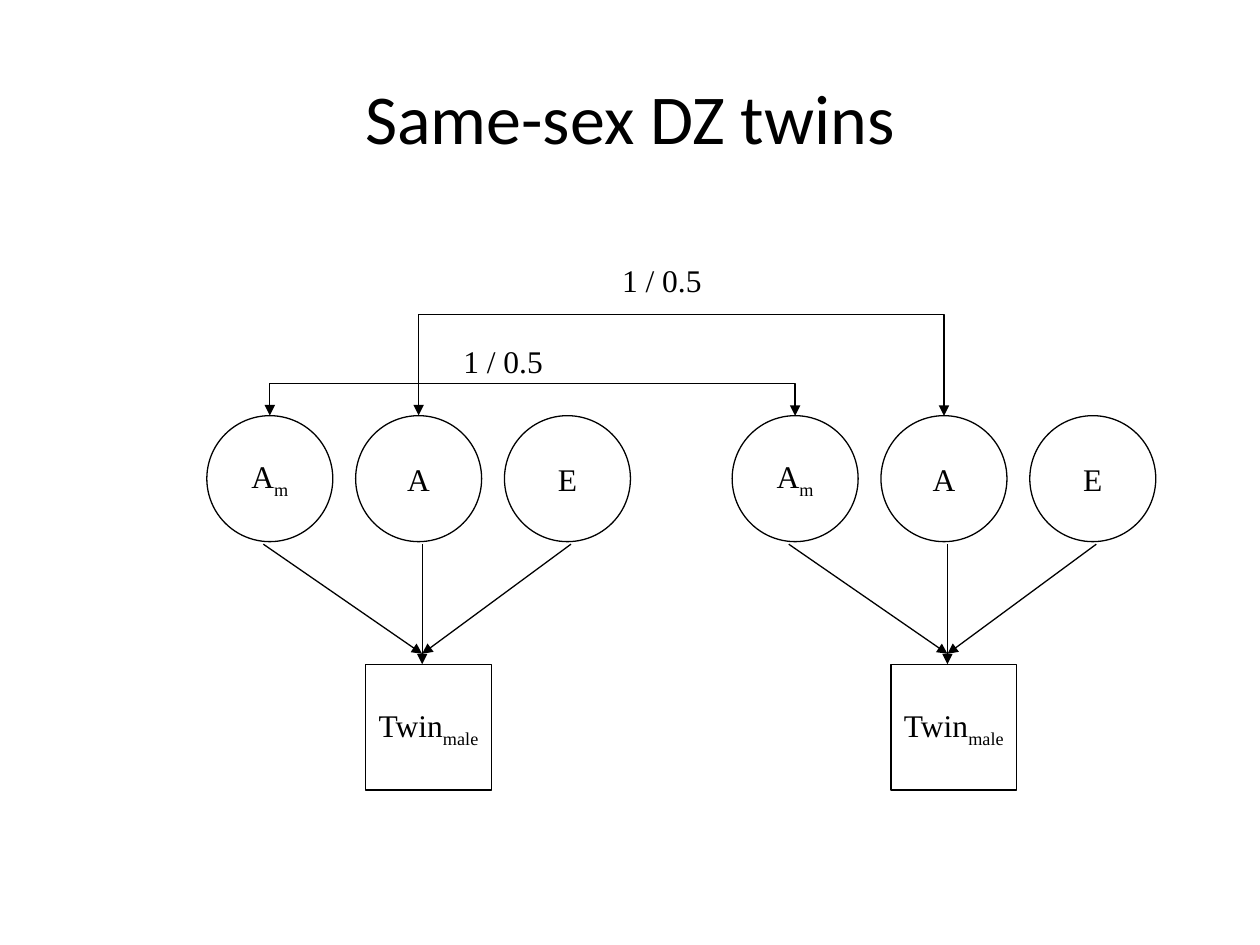
from lxml.etree import SubElement
from pptx import Presentation
from pptx.dml.color import RGBColor
from pptx.enum.shapes import MSO_CONNECTOR as Link, MSO_SHAPE as Preset
from pptx.enum.text import MSO_ANCHOR as Anchor, PP_ALIGN as Align
from pptx.oxml.ns import qn
from pptx.util import Cm, Pt

BLACK = RGBColor(0, 0, 0)
WHITE = RGBColor(255, 255, 255)

NODE = 2.54          # diameter of a circle, side of a square
PITCH = 3.0          # from one circle to the next
TWINS = (4.17, 14.76)  # left edge of each twin's half
CIRCLE_TOP = 8.38
ARROW_TOP = 10.97
SQUARE_TOP = 13.39
THIN = 0.01          # box depth of a bracket whose ends are level


class PathDiagram:
    title_font = "Calibri"
    body_font = "Times New Roman"
    body_size = 18
    line_width = 0.75

    def __init__(self, slide):
        self.shapes = slide.shapes

    def set_text(self, frame, words, size, font, align, subscript=""):
        paragraph = frame.paragraphs[0]
        paragraph.alignment = align
        paragraph.font.size = Pt(size)
        paragraph.font.name = font
        paragraph.font.color.rgb = BLACK
        paragraph.add_run().text = words
        if subscript:
            lowered = paragraph.add_run()
            lowered.text = subscript
            lowered._r.get_or_add_rPr().set("baseline", "-25000")

    def title(self, words, left, top, width, height):
        box = self.shapes.add_textbox(Cm(left), Cm(top), Cm(width), Cm(height))
        box.text_frame.word_wrap = True
        box.text_frame.vertical_anchor = Anchor.MIDDLE
        self.set_text(box.text_frame, words, 40, self.title_font, Align.CENTER)

    def label(self, words, left, top):
        box = self.shapes.add_textbox(Cm(left), Cm(top), Cm(3), Cm(1.02))
        box.text_frame.word_wrap = True
        self.set_text(box.text_frame, words, self.body_size, self.body_font,
                      Align.LEFT)

    def node(self, preset, left, top, words, subscript=""):
        node = self.shapes.add_shape(preset, Cm(left), Cm(top), Cm(NODE), Cm(NODE))
        node.shadow.inherit = False
        node.fill.solid()
        node.fill.fore_color.rgb = WHITE
        node.line.color.rgb = BLACK
        node.line.width = Pt(self.line_width)
        node.text_frame.word_wrap = False
        node.text_frame.vertical_anchor = Anchor.MIDDLE
        self.set_text(node.text_frame, words, self.body_size, self.body_font,
                      Align.CENTER, subscript)

    def connect(self, kind, start, end, arrow_ends):
        """Draw a connector and return its shape properties element."""
        points = [Cm(value) for value in (*start, *end)]
        connector = self.shapes.add_connector(kind, *points)
        connector.line.color.rgb = BLACK
        connector.line.width = Pt(self.line_width)
        properties = connector.element.spPr
        for arrow_end in arrow_ends:
            SubElement(properties.find(qn("a:ln")), qn(arrow_end), type="triangle")
        SubElement(properties, qn("a:effectLst"))
        return properties

    def arrow(self, start, end):
        self.connect(Link.STRAIGHT, start, end, ["a:tailEnd"])

    def bracket(self, left, right, foot, rise):
        """Double-headed elbow over two points at one level, turned a quarter."""
        middle, half = (left + right) / 2, (right - left) / 2
        properties = self.connect(
            Link.ELBOW, (middle - THIN / 2, foot + half),
            (middle + THIN / 2, foot - half), ["a:headEnd", "a:tailEnd"])
        properties.find(qn("a:xfrm")).set("rot", "5400000")
        adjustments = properties.find(qn("a:prstGeom")).find(qn("a:avLst"))
        bend = round(-rise / THIN * 100000)
        SubElement(adjustments, qn("a:gd"), name="adj1", fmla=f"val {bend}")


def main():
    deck = Presentation()
    deck.slide_width, deck.slide_height = Cm(25.4), Cm(19.05)
    diagram = PathDiagram(deck.slides.add_slide(deck.slide_layouts[6]))
    diagram.title("Same-sex DZ twins", 1.27, 0.76, 22.86, 3.18)

    factors = [("A", "m"), ("A", ""), ("E", "")]
    for twin in TWINS:
        for column, (factor, subscript) in enumerate(factors):
            diagram.node(Preset.OVAL, twin + column * PITCH, CIRCLE_TOP,
                         factor, subscript)
        diagram.node(Preset.RECTANGLE, twin + 3.2, SQUARE_TOP, "Twin", "male")
        target = twin + 4.34
        for offset, tip in ((1.14, 13.18), (4.34, SQUARE_TOP), (7.34, 13.18)):
            diagram.arrow((twin + offset, ARROW_TOP), (target, tip))

    correlations = [(0.64, 9.09, 6.78), (2.04, 12.29, 5.13)]
    for column, (rise, label_left, label_top) in enumerate(correlations):
        left, right = (twin + column * PITCH + NODE / 2 for twin in TWINS)
        diagram.bracket(left, right, CIRCLE_TOP, rise)
        diagram.label("1 / 0.5", label_left, label_top)

    deck.save("out.pptx")


if __name__ == "__main__":
    main()
